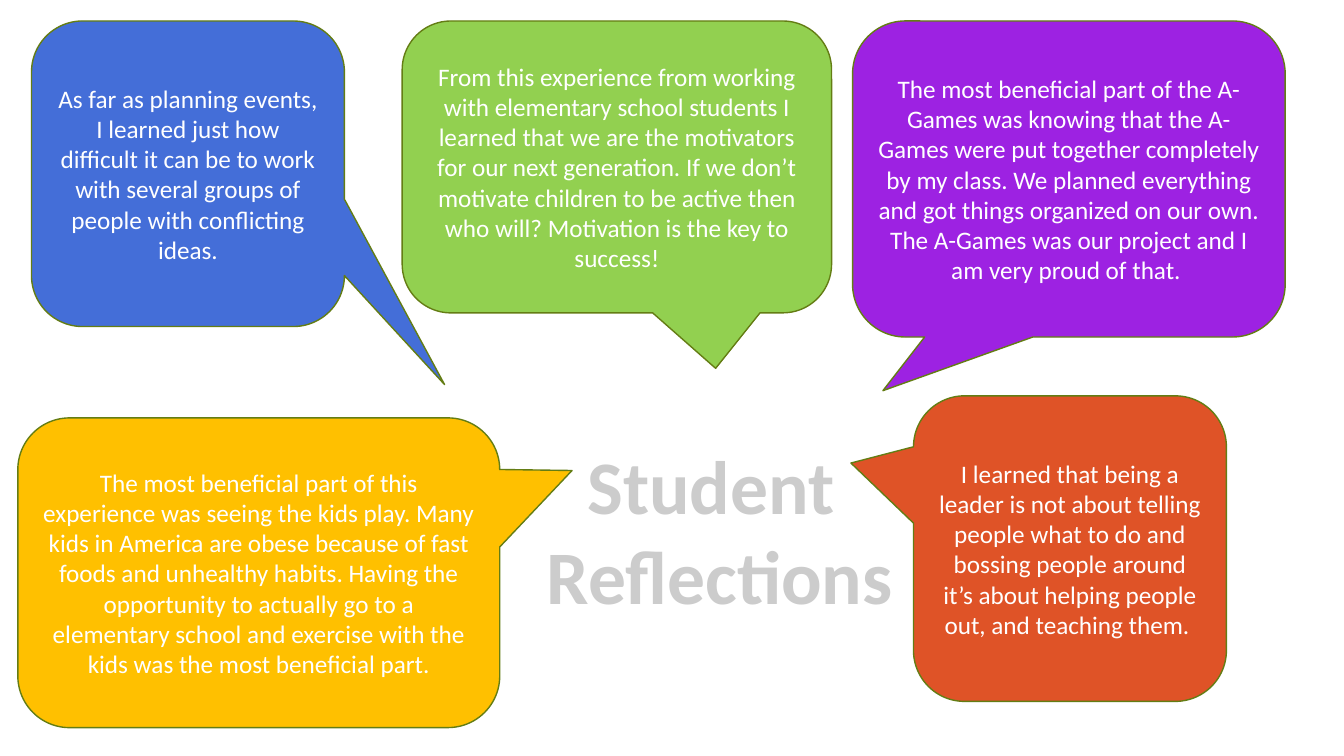
from dataclasses import dataclass

import pptx
import pptx.dml.color
import pptx.enum.shapes
import pptx.enum.text
import pptx.util

EMU_PER_PX = 9525
CORNER_RADIUS = 0.167


@dataclass(frozen=True)
class Theme:
    font: str = "Calibri"
    body_size: int = 18
    title_size: int = 54
    body_text: str = "FFFFFF"
    title_text: str = "CCCCCC"
    outline: str = "647D14"
    blue: str = "446ED8"
    green: str = "92D050"
    purple: str = "9D22E2"
    yellow: str = "FFC000"
    orange: str = "DF5327"


THEME = Theme()

# Fill, bounds in px, tail tip as a share of the size from the centre, words
REFLECTIONS = [
    (THEME.purple, (812, 20, 412, 301), (-0.43, 0.67),
     "The most beneficial part of the A-Games was knowing that the A-Games were "
     "put together completely by my class. We planned everything and got things "
     "organized on our own. The A-Games was our project and I am very proud of that. "),
    (THEME.blue, (30, 20, 298, 291), (0.82, 0.69),
     "As far as planning events, I learned just how difficult it can be to work "
     "with several groups of people with conflicting ideas."),
    (THEME.yellow, (17, 398, 459, 295), (0.65, -0.33),
     "The most beneficial part of this experience was seeing the kids play. Many "
     "kids in America are obese because of fast foods and unhealthy habits. Having "
     "the opportunity to actually go to a elementary school and exercise with the "
     "kids was the most beneficial part."),
    (THEME.orange, (870, 377, 298, 291), (-0.7, -0.28),
     "I learned that being a leader is not about telling people what to do and "
     "bossing people around it’s about helping people out, and teaching them. "),
    (THEME.green, (383, 20, 409, 278), (0.23, 0.69),
     "From this experience from working with elementary school students I learned "
     "that we are the motivators for our next generation. If we don’t motivate "
     "children to be active then who will? Motivation is the key to success!"),
]


def px(length):
    return pptx.util.Emu(length * EMU_PER_PX)


def color(value):
    return pptx.dml.color.RGBColor.from_string(value)


def format_text(frame, size, text_color, bold=False):
    for para in frame.paragraphs:
        para.alignment = pptx.enum.text.PP_ALIGN.CENTER
        para.line_spacing = 1.0
        para.space_before = pptx.util.Pt(0)
        for span in para.runs:
            span.font.name = THEME.font
            span.font.size = pptx.util.Pt(size)
            span.font.bold = bold
            span.font.color.rgb = color(text_color)


def add_callout(page, fill, bounds, tail, words):
    callout = page.shapes.add_shape(
        pptx.enum.shapes.MSO_SHAPE.ROUNDED_RECTANGULAR_CALLOUT, *map(px, bounds))
    for index, value in enumerate((*tail, CORNER_RADIUS)):
        callout.adjustments[index] = value
    callout.shadow.inherit = False
    callout.fill.solid()
    callout.fill.fore_color.rgb = color(fill)
    callout.line.color.rgb = color(THEME.outline)
    callout.line.width = pptx.util.Pt(1)
    frame = callout.text_frame
    frame.word_wrap = True
    frame.vertical_anchor = pptx.enum.text.MSO_ANCHOR.MIDDLE
    frame.text = words
    format_text(frame, THEME.body_size, THEME.body_text)


def place_title(page, bounds, words):
    title = page.shapes.title
    title.left, title.top, title.width, title.height = map(px, bounds)
    frame = title.text_frame
    frame.text = words
    frame.word_wrap = False
    frame.auto_size = pptx.enum.text.MSO_AUTO_SIZE.SHAPE_TO_FIT_TEXT
    frame.vertical_anchor = pptx.enum.text.MSO_ANCHOR.TOP
    format_text(frame, THEME.title_size, THEME.title_text, bold=True)


def main():
    deck = pptx.Presentation()
    deck.slide_width, deck.slide_height = px(1280), px(720)
    page = deck.slides.add_slide(deck.slide_layouts.get_by_name("Title Only"))
    for reflection in REFLECTIONS:
        add_callout(page, *reflection)
    place_title(page, (509, 413, 353, 184), "Student \nReflections")
    deck.save("out.pptx")


if __name__ == "__main__":
    main()
